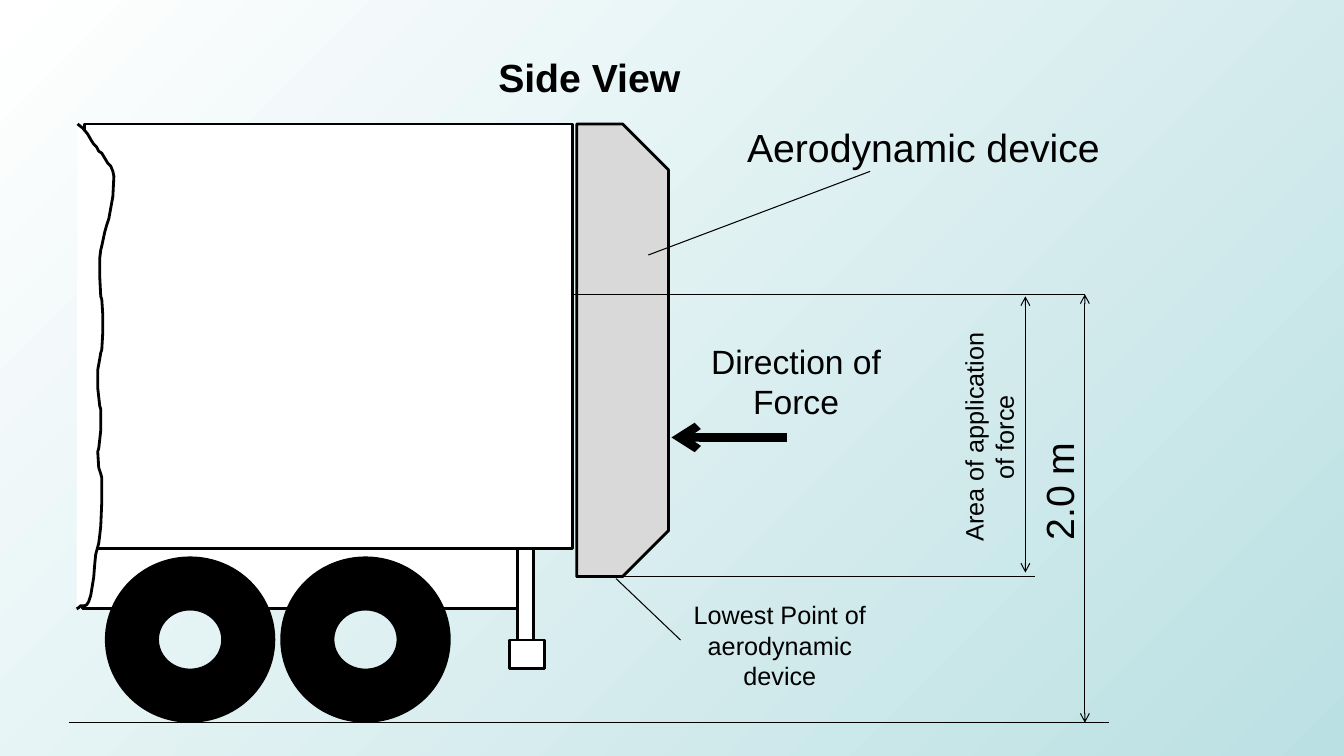
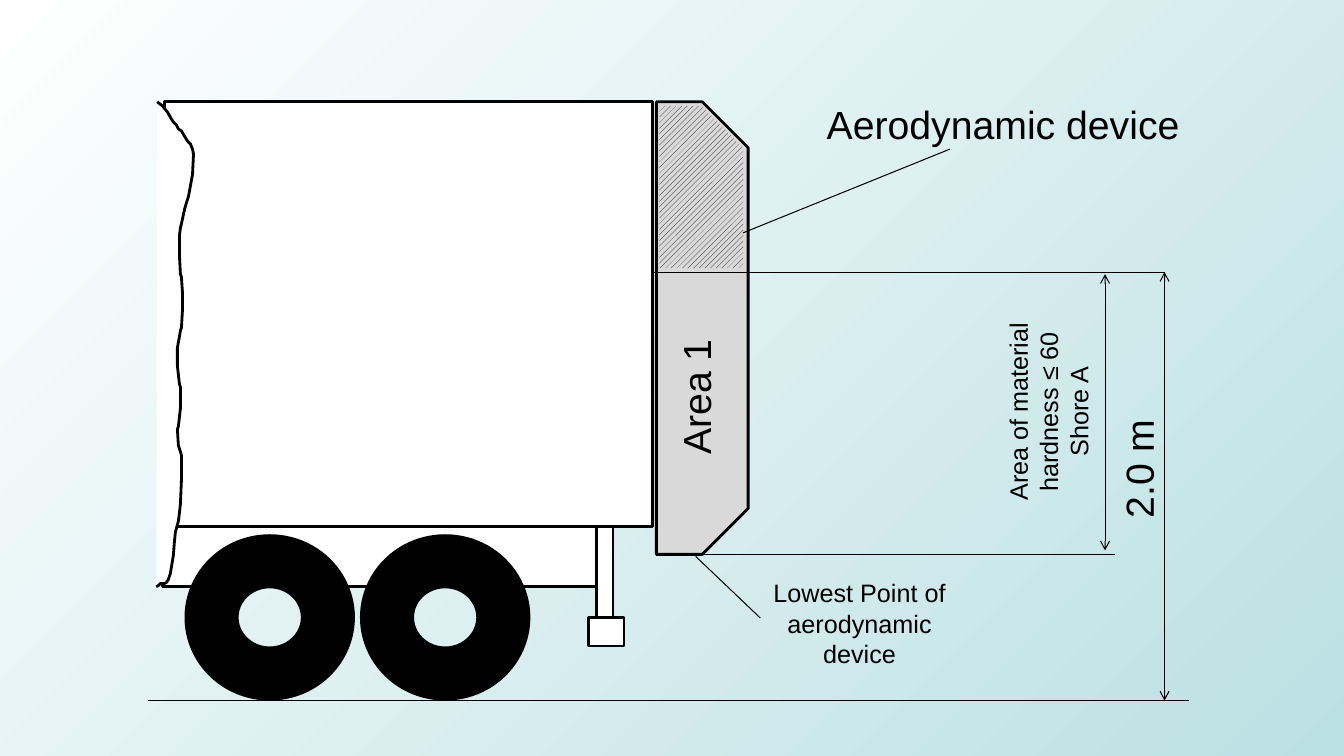
"""Builds two side views of a trailer with a rear aerodynamic device."""
from dataclasses import dataclass

from lxml import etree
from pptx import Presentation
from pptx.dml.color import RGBColor
from pptx.enum import dml, shapes, text
from pptx.oxml import ns
from pptx.util import Inches, Pt


@dataclass(frozen=True)
class Theme:
    font: str = "Arial"
    ink: RGBColor = RGBColor(0, 0, 0)
    white: RGBColor = RGBColor(255, 255, 255)
    grey: RGBColor = RGBColor(0xD9, 0xD9, 0xD9)
    teal: RGBColor = RGBColor(0xBB, 0xE0, 0xE3)
    large: int = 28
    medium: int = 24
    small: int = 18
    thin: float = 0.75
    outline: float = 2
    heavy: float = 6


@dataclass(frozen=True)
class Page:
    layout: int
    dx: float
    dy: float
    leader_x: float
    labels: tuple


def add_label(s, words, x, y, w, h, size, rotation=0, align=text.PP_ALIGN.CENTER):
    sp = s.shapes.add_textbox(Inches(x), Inches(y), Inches(w), Inches(h))
    sp.rotation = rotation
    tf = sp.text_frame
    tf.word_wrap = True
    tf.margin_left = tf.margin_top = tf.margin_right = tf.margin_bottom = 0
    p = tf.paragraphs[0]
    p.alignment = align
    r = p.add_run()
    r.text = words
    r.font.name, r.font.size = T.font, Pt(size)
    r.font.color.rgb = T.ink


def add_line(s, x1, y1, x2, y2, width, ends=()):
    c = s.shapes.add_connector(shapes.MSO_CONNECTOR.STRAIGHT,
                               Inches(x1), Inches(y1), Inches(x2), Inches(y2))
    c.line.color.rgb = T.ink
    c.line.width = Pt(width)
    ln = c.line._get_or_add_ln()
    for end in ends:
        etree.SubElement(ln, ns.qn(f"a:{end}"), type="arrow")
    etree.SubElement(c.element.spPr, ns.qn("a:effectLst"))


T = Theme()
BOTH = ("headEnd", "tailEnd")
RECT = shapes.MSO_SHAPE.RECTANGLE
DONUT = shapes.MSO_SHAPE.DONUT
SNIPPED = shapes.MSO_SHAPE.SNIP_2_SAME_RECTANGLE

PARTS = [
    (RECT, 0.84, 1.23, 4.84, 4.21, T.white, 0, ()),
    (RECT, 0.82, 5.44, 4.47, 0.6, T.white, 0, ()),
    (DONUT, 2.78, 5.52, 1.69, 1.65, T.ink, 0, (0.325,)),
    (DONUT, 1.04, 5.52, 1.69, 1.65, T.ink, 0, (0.325,)),
    (RECT, 5.13, 5.44, 0.16, 1.02, T.white, 0, ()),
    (RECT, 5.05, 6.35, 0.35, 0.28, T.white, 0, ()),
    (SNIPPED, 3.93, 3.02, 4.49, 0.91, T.grey, 90, (0.5, 0)),
]
TORN_EDGE = [
    (0.77, 1.23), (0.82, 1.27), (0.87, 1.33), (0.91, 1.4), (0.93, 1.43),
    (0.96, 1.46), (0.98, 1.5), (1.01, 1.52), (1.07, 1.62), (1.1, 1.65),
    (1.12, 1.7), (1.13, 1.75), (1.12, 1.95), (1.1, 2.06), (1.08, 2.17),
    (1.06, 2.23), (1.04, 2.3), (1.01, 2.44), (1, 2.48), (0.99, 2.56),
    (0.99, 2.75), (1, 2.94), (1.01, 2.97), (1.02, 3.12), (1.02, 3.3),
    (1.01, 3.47), (1, 3.5), (0.99, 3.56), (0.97, 3.67), (0.97, 3.85),
    (0.99, 4.03), (1, 4.06), (1, 4.27), (0.98, 4.45), (0.97, 4.48),
    (0.98, 4.64), (1, 4.7), (1.01, 4.74), (1.01, 4.98), (1, 5.22),
    (0.99, 5.31), (0.98, 5.39), (0.95, 5.5), (0.94, 5.6), (0.93, 5.73),
    (0.91, 5.85), (0.9, 5.91), (0.88, 5.97), (0.86, 6), (0.84, 6.01),
    (0.8, 6.01), (0.78, 6.03), (0.76, 6.04),
]
LINES = [
    (0.68, 7.17, 11, 7.17, ()),
    (5.68, 2.92, 10.76, 2.92, ()),
    (5.72, 5.72, 10.27, 5.72, ()),
    (6.75, 6.35, 6.11, 5.74, ()),
    (10.76, 2.92, 10.76, 7.17, BOTH),
    (10.17, 2.94, 10.17, 5.68, BOTH),
]
LABELS = [
    ("Aerodynamic device", 7.41, 1.22, 3.86, 0.63, T.large, 0, text.PP_ALIGN.LEFT),
    ("Lowest Point of aerodynamic device", 6.75, 5.95, 1.97, 1.15, T.small),
    ("2.0 m", 9.29, 4.63, 2.44, 0.49, T.large, 270),
]
PAGES = [
    Page(5, 0, 0, 6.43, (
        ("Area of application of force", 8.96, 3.76, 2.24, 1.15, T.small, 270),
        ("Direction of Force", 6.85, 3.38, 2.09, 0.81, T.medium))),
    Page(6, 0.79, -0.22, 6.58, (
        ("Area of material hardness ≤ 60 Shore A", 8.61, 3.73, 2.24, 1.15, T.small, 270),
        ("Area 1", 5.3, 3.93, 1.61, 0.46, T.large, 270))),
]

prs = Presentation()
prs.slide_width, prs.slide_height = Inches(13.33), Inches(7.5)
backdrop = prs.slide_master.background.fill
backdrop.gradient()
backdrop.gradient_angle = 315
for stop, position, color in zip(backdrop.gradient_stops, (0, 1), (T.white, T.teal)):
    stop.position = position
    stop.color.rgb = color

for page in PAGES:
    s = prs.slides.add_slide(prs.slide_layouts[page.layout])
    dx, dy = page.dx, page.dy

    for kind, x, y, w, h, color, rotation, adjustments in PARTS:
        sp = s.shapes.add_shape(kind, Inches(x + dx), Inches(y + dy), Inches(w), Inches(h))
        sp.shadow.inherit = False
        sp.rotation = rotation
        for i, value in enumerate(adjustments):
            sp.adjustments[i] = value
        sp.fill.solid()
        sp.fill.fore_color.rgb = color
        if kind == DONUT:
            sp.line.fill.background()
        else:
            sp.line.color.rgb = T.ink
            sp.line.width = Pt(T.outline)

    points = [(Inches(x + dx), Inches(y + dy)) for x, y in TORN_EDGE]
    builder = s.shapes.build_freeform(*points[0])
    builder.add_line_segments(points[1:], close=False)
    torn = builder.convert_to_shape()
    torn.shadow.inherit = False
    torn.fill.solid()
    torn.fill.fore_color.rgb = T.white
    torn.line.color.rgb = T.ink
    torn.line.width = Pt(T.outline)

    leader = (page.leader_x, 2.53, 8.63, 1.7, ())
    for x1, y1, x2, y2, ends in LINES + [leader]:
        add_line(s, x1 + dx, y1 + dy, x2 + dx, y2 + dy, T.thin, ends)
    for words, x, y, *rest in LABELS + list(page.labels):
        add_label(s, words, x + dx, y + dy, *rest)

side_view, area_view = prs.slides

title = side_view.shapes.title
title.left, title.top = Inches(4.83), Inches(0.48)
title.width, title.height = Inches(2.03), Inches(0.57)
tf = title.text_frame
tf.word_wrap = False
p = tf.paragraphs[0]
p.alignment = text.PP_ALIGN.CENTER
r = p.add_run()
r.text = "Side View"
r.font.name, r.font.size, r.font.bold = T.font, Pt(T.large), True
r.font.color.rgb = T.ink
add_line(side_view, 7.81, 4.34, 6.66, 4.34, T.heavy, ("tailEnd",))

hatch = area_view.shapes.add_shape(shapes.MSO_SHAPE.SNIP_1_RECTANGLE, Inches(6.54),
                                   Inches(1.05), Inches(0.83), Inches(1.61))
hatch.shadow.inherit = False
hatch.adjustments[0] = 0.5
hatch.fill.patterned()
hatch.fill.pattern = dml.MSO_PATTERN.WIDE_UPWARD_DIAGONAL
hatch.fill.fore_color.rgb = T.ink
hatch.fill.back_color.rgb = T.grey
hatch.line.fill.background()

prs.save("out.pptx")
